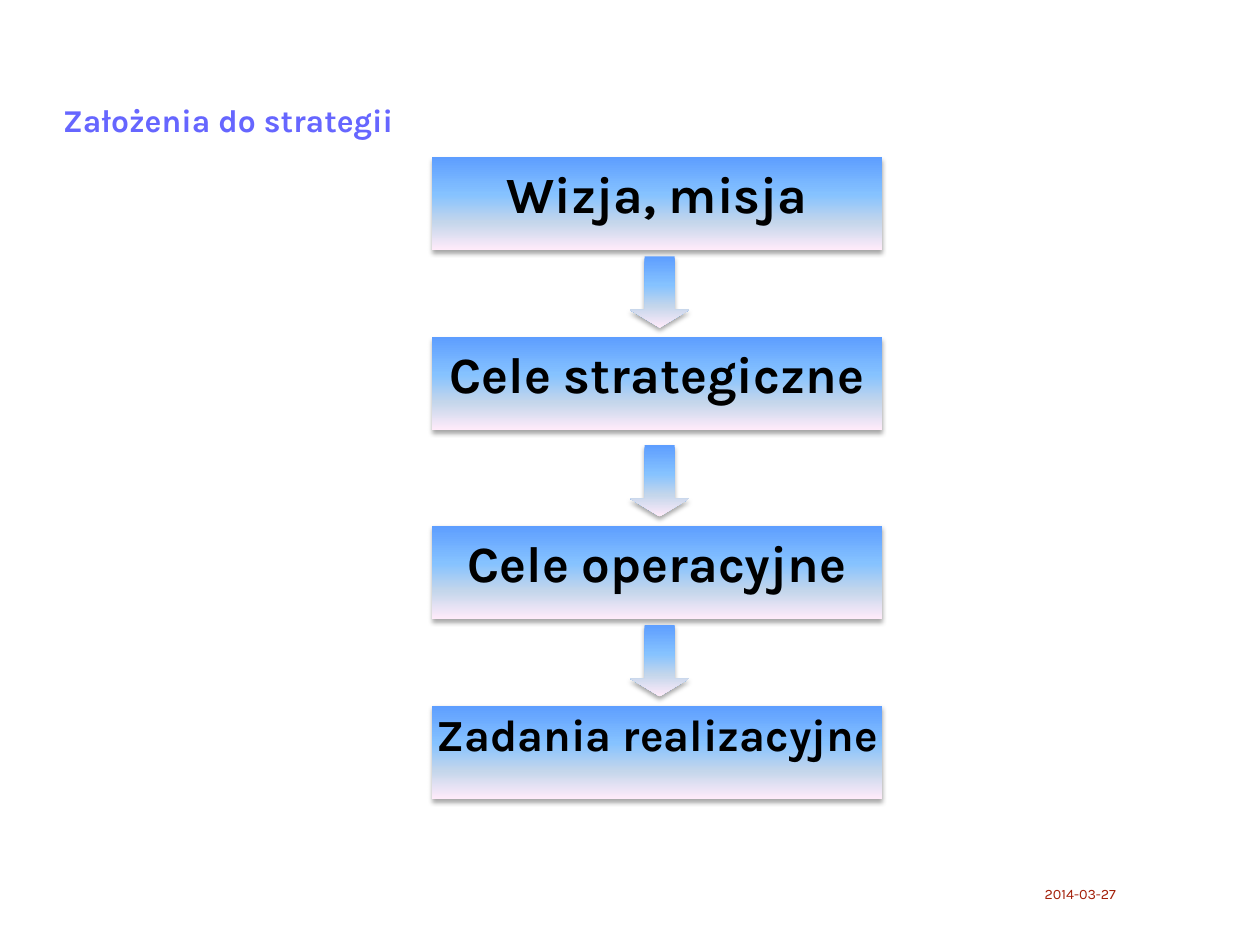
from lxml.etree import SubElement
from pptx import Presentation
from pptx.dml.color import RGBColor
from pptx.enum.shapes import MSO_SHAPE
from pptx.enum.text import MSO_ANCHOR, PP_ALIGN
from pptx.oxml.ns import qn
from pptx.util import Pt

COLOURS = {"title": "6666FF", "date": "A31F09", "step": "000000", "shadow": "000000"}
GRADIENT = [(0, "5E9EFF"), (40, "85C2FF"), (70, "C4D6EB"), (100, "FFEBFA")]
FONT = "Karla"

TITLE = "Założenia do strategii"
DATE = "2014-03-27"
# label, top, font size, (side inset, top inset)
STEPS = [
    ("Wizja, misja", 99, 32, (7.2, 3.6)),
    ("Cele strategiczne", 212.4, 32, (7.2, 3.6)),
    ("Cele operacyjne", 331.3, 32, (7.2, 3.6)),
    ("Zadania realizacyjne", 444.6, 28, (1.4, 0.7)),
]
STEP_LEFT, STEP_WIDTH, STEP_HEIGHT = 272.2, 283.5, 58.5
ARROW_LEFT, ARROW_WIDTH, ARROW_HEIGHT = 396.8, 37.6, 44.9
ARROW_RISE = 50.9  # from the top of an arrow to the top of the step below it


def add_text(shape, text, size, colour, bold=False, insets=(0, 0),
             anchor=MSO_ANCHOR.TOP, paragraph_format=None):
    frame = shape.text_frame
    side, edge = insets
    frame_format = {
        "word_wrap": True, "vertical_anchor": anchor,
        "margin_left": Pt(side), "margin_right": Pt(side),
        "margin_top": Pt(edge), "margin_bottom": Pt(edge),
    }
    for name, value in frame_format.items():
        setattr(frame, name, value)
    para = frame.paragraphs[0]
    for name, value in (paragraph_format or {}).items():
        setattr(para, name, value)
    span = para.add_run()
    span.text = text
    for name, value in {"name": FONT, "size": Pt(size), "bold": bold}.items():
        setattr(span.font, name, value)
    span.font.color.rgb = RGBColor.from_string(COLOURS[colour])


def add_colour(parent, colour):
    return SubElement(parent, qn("a:srgbClr"), val=colour)


def add_glossy_shape(group, kind, left, top, width, height):
    """Add a borderless shape with the vertical gradient and a soft shadow."""
    shape = group.shapes.add_shape(kind, Pt(left), Pt(top), Pt(width), Pt(height))
    shape.line.fill.background()
    shape.fill.gradient()
    shape.fill.gradient_angle = 270
    properties = shape.element.spPr
    stops = properties.find(".//" + qn("a:gsLst"))
    for stop in list(stops):
        stops.remove(stop)
    for percent, colour in GRADIENT:
        add_colour(SubElement(stops, qn("a:gs"), pos=str(percent * 1000)), colour)

    shape.shadow.inherit = False
    shadow = SubElement(
        properties.find(qn("a:effectLst")), qn("a:outerShdw"),
        blurRad=str(Pt(3.1)), dist=str(Pt(1.8)), dir="5400000", rotWithShape="0")
    SubElement(add_colour(shadow, COLOURS["shadow"]), qn("a:alpha"), val="35000")
    return shape


def add_flow(page):
    group = page.shapes.add_group_shape()
    step_format = {"alignment": PP_ALIGN.CENTER, "space_after": Pt(6)}
    for index, (label, top, size, insets) in enumerate(STEPS):
        if index:
            arrow = add_glossy_shape(group, MSO_SHAPE.DOWN_ARROW, ARROW_LEFT,
                                     top - ARROW_RISE, ARROW_WIDTH, ARROW_HEIGHT)
            arrow.adjustments[0] = 0.5
            arrow.adjustments[1] = 0.3
        step = add_glossy_shape(group, MSO_SHAPE.RECTANGLE, STEP_LEFT, top,
                                STEP_WIDTH, STEP_HEIGHT)
        add_text(step, label, size, "step", True, insets,
                 paragraph_format=step_format)


def main():
    deck = Presentation()
    deck.slide_width, deck.slide_height = Pt(793.75), Pt(595.25)
    page = deck.slides.add_slide(deck.slide_layouts[6])
    add_flow(page)
    date_box = page.shapes.add_textbox(Pt(658.1), Pt(557.3), Pt(68.4), Pt(18.7))
    add_text(date_box, DATE, 9, "date")
    title_box = page.shapes.add_textbox(Pt(39.6), Pt(36.5), Pt(593.3), Pt(50.9))
    add_text(title_box, TITLE, 20, "title", True, anchor=MSO_ANCHOR.BOTTOM,
             paragraph_format={"line_spacing": 1.3})
    deck.save("out.pptx")


if __name__ == "__main__":
    main()
